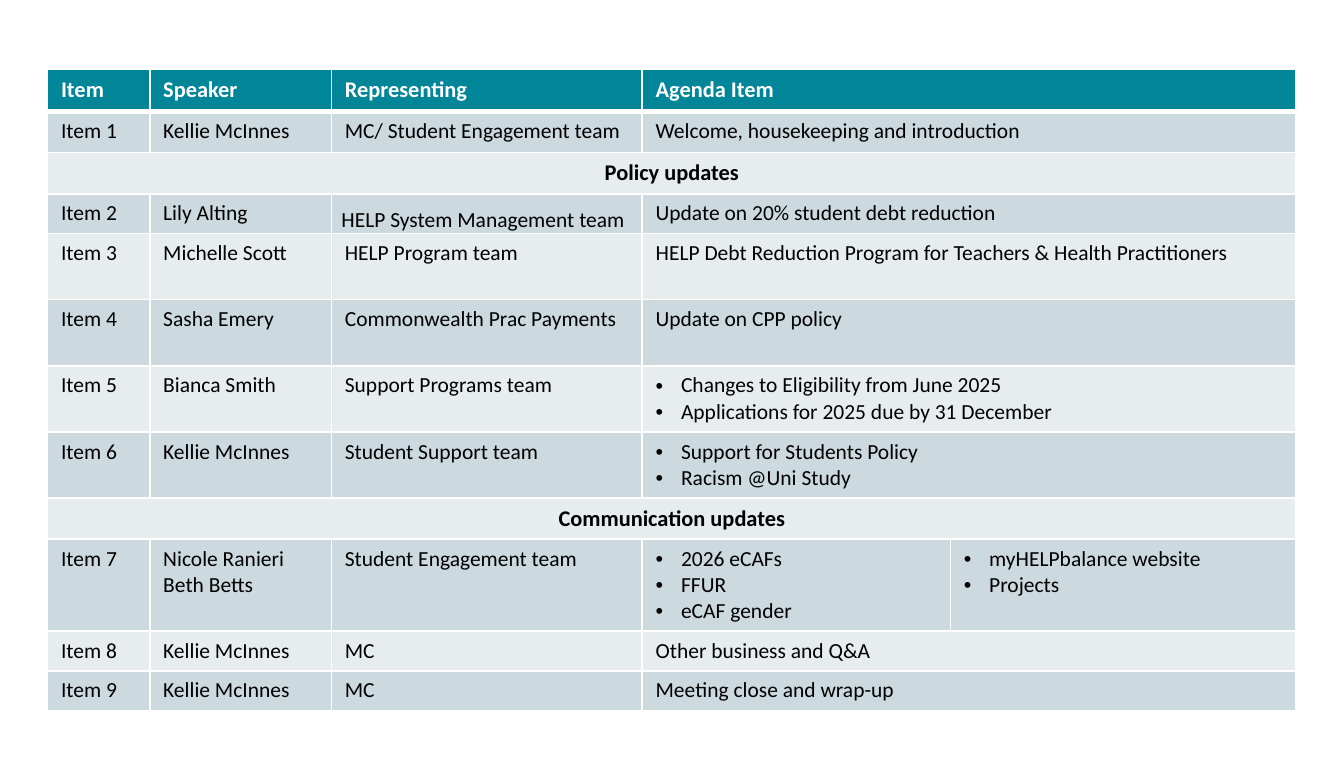
import pptx
import pptx.dml.color
import pptx.enum.text
import pptx.oxml
import pptx.oxml.ns
import pptx.util
from lxml import etree
from pptx.util import Cm

FONT = "Calibri"
TEAL, DARK_BAND, LIGHT_BAND = "008599", "CCD9DE", "E7EDEF"
WHITE, BLACK = "FFFFFF", "000000"
COL_WIDTHS = [1.93, 3.43, 5.87, 5.82, 6.53]
ROW_HEIGHTS = [0.79, 0.78, 0.78, 0.75, 1.25, 1.25, 1.25, 1.25, 0.77, 1.74, 0.75, 0.75]
AGENDA = [
    ["Item", "Speaker", "Representing", "Agenda Item"],
    ["Item 1", "Kellie McInnes", "MC/ Student Engagement team", "Welcome, housekeeping and introduction"],
    ["Policy updates"],
    ["Item 2", "Lily Alting", "HELP System Management team", "Update on 20% student debt reduction"],
    ["Item 3", "Michelle Scott", "HELP Program team",
     "HELP Debt Reduction Program for Teachers & Health Practitioners"],
    ["Item 4", "Sasha Emery", "Commonwealth Prac Payments", "Update on CPP policy"],
    ["Item 5", "Bianca Smith", "Support Programs team",
     ["Changes to Eligibility from June 2025", "Applications for 2025 due by 31 December"]],
    ["Item 6", "Kellie McInnes", "Student Support team",
     ["Support for Students Policy", "Racism @Uni Study"]],
    ["Communication updates"],
    ["Item 7", "Nicole Ranieri\nBeth Betts", "Student Engagement team",
     ["2026 eCAFs", "FFUR", "eCAF gender"], ["myHELPbalance website", "Projects"]],
    ["Item 8", "Kellie McInnes", "MC", "Other business and Q&A"],
    ["Item 9", "Kellie McInnes", "MC", "Meeting close and wrap-up"],
]


def rgb(color):
    return pptx.dml.color.RGBColor.from_string(color)


def set_borders(cell, top=1, bottom=1):
    tcPr = cell._tc.get_or_add_tcPr()
    for side, width in (("L", 1), ("R", 1), ("T", top), ("B", bottom)):
        ln = etree.SubElement(tcPr, pptx.oxml.ns.qn(f"a:ln{side}"), w=str(pptx.util.Pt(width)))
        fill = etree.SubElement(ln, pptx.oxml.ns.qn("a:solidFill"))
        etree.SubElement(fill, pptx.oxml.ns.qn("a:srgbClr"), val=WHITE)


def add_bullet(p):
    pPr = p._p.get_or_add_pPr()
    indent = Cm(0.48)
    pPr.set("marL", str(indent))
    pPr.set("indent", str(-indent))
    etree.SubElement(pPr, pptx.oxml.ns.qn("a:buFont"), typeface="Arial")
    etree.SubElement(pPr, pptx.oxml.ns.qn("a:buChar"), char="•")


def fill_cell(cell, content, size, color, bold, centered):
    bulleted = isinstance(content, list)
    tf = cell.text_frame
    tf.text = "\n".join(content) if bulleted else content
    for p in tf.paragraphs:
        if bulleted:
            add_bullet(p)
        if centered:
            p.alignment = pptx.enum.text.PP_ALIGN.CENTER
        for r in p.runs:
            r.font.name = FONT
            r.font.size = pptx.util.Pt(size)
            r.font.bold = bold
            r.font.color.rgb = rgb(color)


def add_agenda(s, left, top, width, height):
    columns = len(COL_WIDTHS)
    table = s.shapes.add_table(len(AGENDA), columns, left, top, width, height).table
    for column, share in zip(table.columns, COL_WIDTHS):
        column.width = int(width * share / sum(COL_WIDTHS))
    for row, share in zip(table.rows, ROW_HEIGHTS):
        row.height = int(height * share / sum(ROW_HEIGHTS))

    for i, entries in enumerate(AGENDA):
        header, section = i == 0, len(entries) == 1
        band = TEAL if header else DARK_BAND if i % 2 else LIGHT_BAND
        for j in range(columns):
            cell = table.cell(i, j)
            set_borders(cell, top=3 if i == 1 else 1, bottom=3 if header else 1)
            cell.fill.solid()
            cell.fill.fore_color.rgb = rgb(band)
        if len(entries) < columns:
            table.cell(i, len(entries) - 1).merge(table.cell(i, columns - 1))
        for j, content in enumerate(entries):
            fill_cell(table.cell(i, j), content, 12 if header or section else 11.5,
                      WHITE if header else BLACK, header or section, section)

    help_cell = table.cell(3, 2)
    help_cell.margin_left = help_cell.margin_right = Cm(0.19)
    help_cell.margin_top = help_cell.margin_bottom = 0
    help_cell.text_frame.paragraphs[0].line_spacing = 1.5


def main():
    prs = pptx.Presentation()
    prs.slide_width, prs.slide_height = Cm(25.4), Cm(14.3)
    s = prs.slides.add_slide(prs.slide_layouts[6])
    add_agenda(s, Cm(0.9), Cm(1.31), Cm(23.6), Cm(12.11))
    prs.save("out.pptx")


if __name__ == "__main__":
    main()
